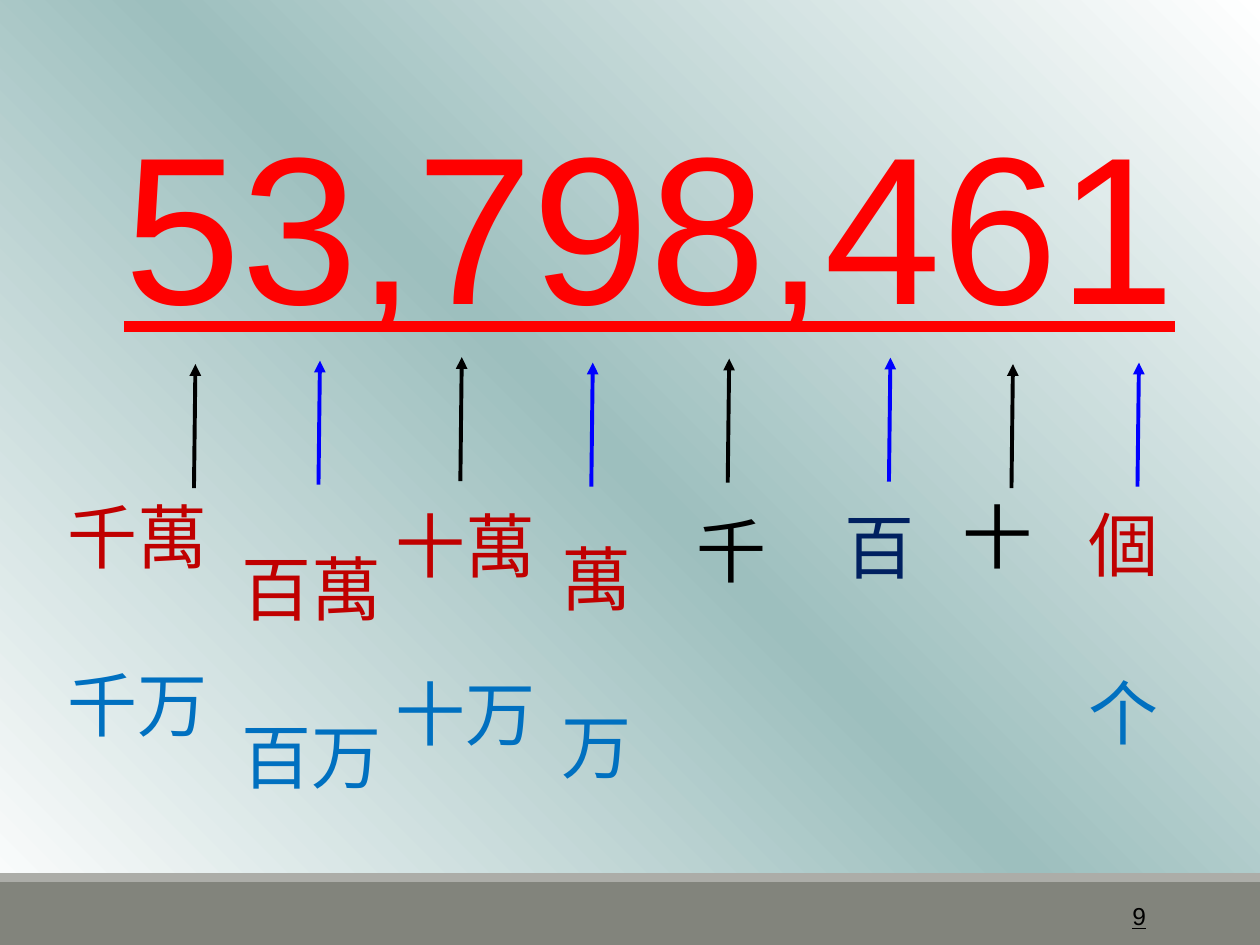
"""Build a slide that names the place values of an eight-digit number in Chinese."""
from copy import deepcopy

from lxml import etree
from pptx import Presentation
from pptx.dml.color import RGBColor
from pptx.enum.shapes import MSO_CONNECTOR, MSO_SHAPE
from pptx.enum.text import MSO_ANCHOR, PP_ALIGN
from pptx.oxml.ns import qn
from pptx.util import Cm, Pt

STRAIGHT = MSO_CONNECTOR.STRAIGHT
RECTANGLE = MSO_SHAPE.RECTANGLE
TOP, MIDDLE = MSO_ANCHOR.TOP, MSO_ANCHOR.MIDDLE
LEFT, RIGHT = PP_ALIGN.LEFT, PP_ALIGN.RIGHT

LATIN, HAN = "Arial", "Noto Sans CJK SC"
BLACK, BLUE, NAVY = "000000", "0000FF", "002060"
RED, DARK_RED, SKY = "FF0000", "C00000", "0070C0"


def rgb(value):
    return RGBColor.from_string(value)


def add_text(lines, box, size, font=LATIN, underline=False, wrap=True, align=LEFT,
             anchor=TOP, gap=0):
    frame = slide.shapes.add_textbox(*[Cm(v) for v in box]).text_frame
    frame.word_wrap = wrap
    frame.vertical_anchor = anchor
    for index, (text, color) in enumerate(lines):
        paragraph = frame.add_paragraph() if index else frame.paragraphs[0]
        paragraph.alignment = align
        if index:
            paragraph.space_before = Pt(gap)
        run = paragraph.add_run()
        run.text = text
        run.font.size = Pt(size)
        run.font.name = font
        run.font.underline = underline
        run.font.color.rgb = rgb(color)
        etree.SubElement(run.font._element, qn("a:ea"), typeface=font)


prs = Presentation()
prs.slide_width, prs.slide_height = Cm(25.4), Cm(19.05)
slide = prs.slides.add_slide(prs.slide_layouts[6])

backdrop = slide.background.fill
backdrop.gradient()
backdrop.gradient_angle = 45
stops = backdrop.gradient_stops
for stop, position, color in zip(stops, (0, 0.5), ("FFFFFF", "9DBFBE")):
    stop.position = position
    stop.color.rgb = rgb(color)
stop_list = slide._element.find(".//" + qn("a:gsLst"))
last_stop = deepcopy(stop_list[0])
last_stop.set("pos", "100000")
stop_list.append(last_stop)

for top, height, color in ((17.78, 1.27, "82847C"), (17.6, 0.18, "ACADA8")):
    band = slide.shapes.add_shape(RECTANGLE, 0, Cm(top), prs.slide_width, Cm(height))
    band.shadow.inherit = False
    band.fill.solid()
    band.fill.fore_color.rgb = rgb(color)
    band.line.fill.background()

add_text([("53,798,461", RED)], (2.26, 1.78, 21.72, 5.33), 120,
         underline=True, wrap=False)

arrow_feet = [(3.91, 9.84), (6.42, 9.77), (9.28, 9.7), (11.92, 9.81),
              (14.67, 9.73), (17.92, 9.71), (20.39, 9.84), (22.93, 9.81)]
for index, (x, y) in enumerate(arrow_feet):
    arrow = slide.shapes.add_connector(STRAIGHT, Cm(x), Cm(y), Cm(x + 0.03), Cm(y - 2.5))
    arrow.line.color.rgb = rgb(BLUE if index % 2 else BLACK)
    arrow.line.width = Pt(2.25)
    etree.SubElement(arrow.line._get_or_add_ln(), qn("a:tailEnd"), type="triangle")
    etree.SubElement(arrow._element.spPr, qn("a:effectLst"))

place_names = [
    ("千萬", "千万", DARK_RED, (1.12, 9.83, 4.17, 5.38)),
    ("百萬", "百万", DARK_RED, (4.62, 10.87, 3.71, 7.95)),
    ("十萬", "十万", DARK_RED, (7.72, 10.01, 3.56, 10.52)),
    ("萬", "万", DARK_RED, (11.08, 10.67, 1.93, 7.95)),
    ("千", None, BLACK, (13.79, 10.11, 1.93, 4.52)),
    ("百", None, NAVY, (16.78, 10.03, 1.93, 4.52)),
    ("十", None, BLACK, (19.15, 9.83, 1.93, 4.52)),
    ("個", "个", DARK_RED, (21.69, 9.98, 1.93, 7.95)),
]
for traditional, simplified, color, box in place_names:
    lines = [(traditional, color)]
    if simplified:
        lines.append((simplified, SKY))
    add_text(lines, box, 40, font=HAN, wrap=len(traditional) > 1, gap=48)

add_text([("9", BLACK)], (20.61, 17.95, 2.74, 1.02), 14,
         underline=True, align=RIGHT, anchor=MIDDLE)

prs.save("out.pptx")
